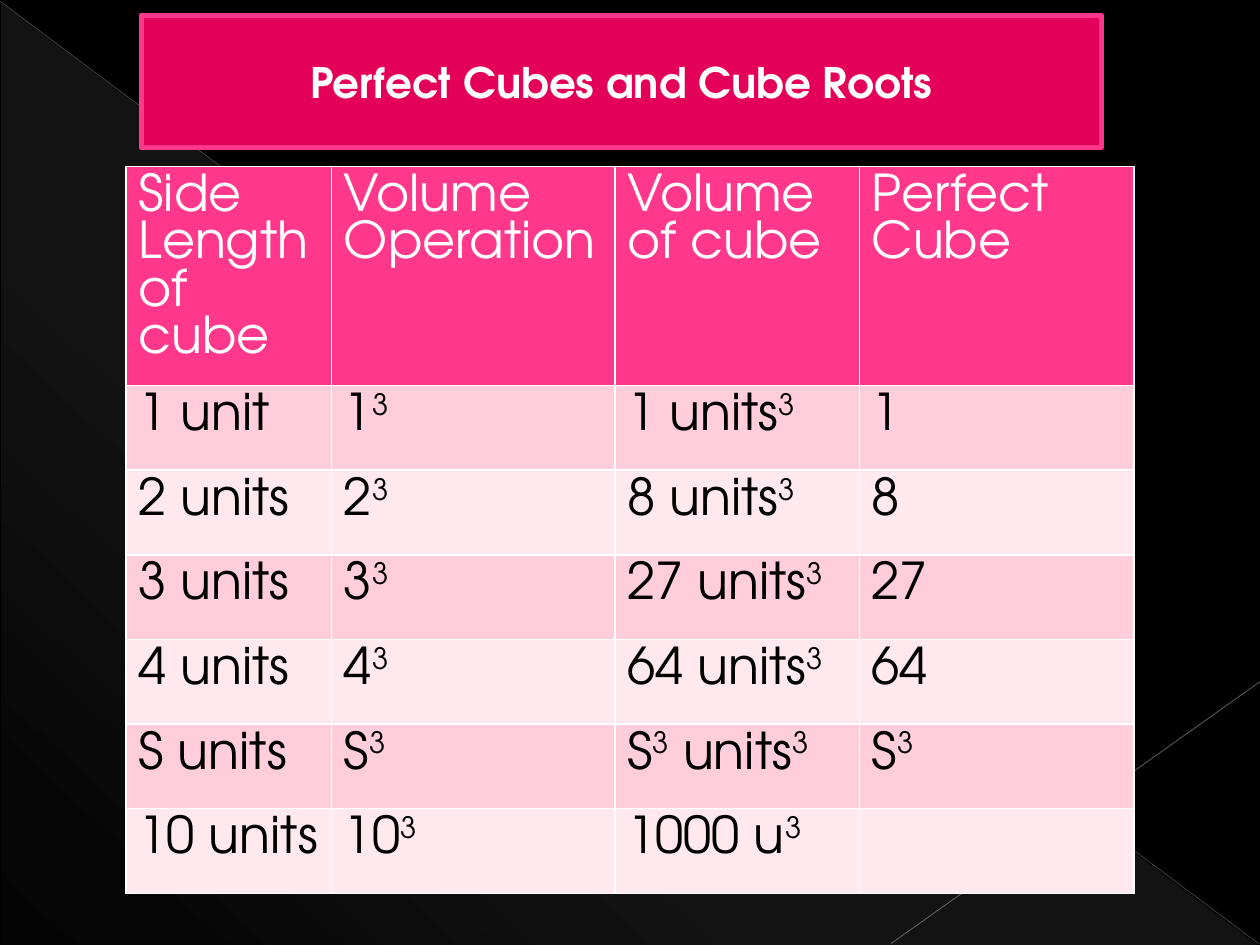
from itertools import groupby

from lxml import etree
from pptx import Presentation
from pptx.dml.color import RGBColor
from pptx.enum.shapes import MSO_CONNECTOR as CONN, MSO_SHAPE as SHAPE
from pptx.enum.text import MSO_ANCHOR as ANCHOR, PP_ALIGN as ALIGN
from pptx.oxml import parse_xml
from pptx.oxml.ns import nsdecls, qn
from pptx.util import Inches, Pt

FONT = "TeX Gyre Adventor"
COLUMNS = [1.63, 2.25, 1.94, 2.18]
ROWS = [
    ["Side Length of cube", "Volume Operation", "Volume of cube", "Perfect Cube"],
    ["1 unit", "1³", "1 units³", "1"],
    ["2 units", "2³", "8 units³", "8"],
    ["3 units", "3³", "27 units³", "27"],
    ["4 units", "4³", "64 units³", "64"],
    ["S units", "S³", "S³ units³", "S³"],
    ["10 units", "10³", "1000 u³", ""],
]


def rgb(value):
    """Turn a hex string into a colour."""
    return RGBColor.from_string(value)


def set_font(p, size, color, bold=False):
    """Set the font of a whole paragraph."""
    p.font.name, p.font.size, p.font.bold = FONT, Pt(size), bold
    p.font.color.rgb = rgb(color)


def add_ray(s, start, end, color, width, opacity):
    """Draw a thin translucent line."""
    ray = s.shapes.add_connector(CONN.STRAIGHT, *map(Inches, start + end))
    ray.line.color.rgb = rgb(color)
    ray.line.width = Pt(width)
    clr = ray.line._ln.find(".//" + qn("a:srgbClr"))
    etree.SubElement(clr, qn("a:alpha")).set("val", str(opacity * 1000))
    etree.SubElement(ray._element.spPr, qn("a:effectLst"))


def add_backdrop(s, left, top, width, height):
    """Draw the faint triangle and the crossing lines behind the content."""
    box = (left + 0.01, top + 0.02, width - 0.02, height - 0.02)
    sp = s.shapes.add_shape(SHAPE.RIGHT_TRIANGLE, *map(Inches, box))
    sp.shadow.inherit = False
    sp.line.fill.background()
    stops = "".join(
        f'<a:gs pos="{pos}000"><a:srgbClr val="D2D2D2"><a:alpha val="{alpha}000"/></a:srgbClr></a:gs>'
        for pos, alpha in [(0, 10), (70, 8), (100, 1)]
    )
    grad = parse_xml(
        f'<a:gradFill {nsdecls("a")} rotWithShape="1"><a:gsLst>{stops}</a:gsLst>'
        f'<a:lin ang="{133 * 60000}" scaled="0"/></a:gradFill>'
    )
    sp._element.spPr.find(qn("a:prstGeom")).addnext(grad)
    right, bottom = left + width, top + height - 0.01
    add_ray(s, (left, top + 0.01), (right - 0.01, bottom), "BFBFBF", 0.39, 35)
    add_ray(s, (right, top + 5.41), (left + 7.07, bottom), "C6C6C6", 0.47, 45)


def add_title(s, left, top, width, height):
    """Draw the framed title."""
    sp = s.shapes.add_shape(SHAPE.RECTANGLE, *map(Inches, (left, top, width, height)))
    sp.shadow.inherit = False
    sp.fill.solid()
    sp.fill.fore_color.rgb = rgb("E40059")
    sp.line.color.rgb = rgb("FF388C")
    sp.line.width = Pt(3)
    tf = sp.text_frame
    tf.word_wrap = True
    tf.vertical_anchor = ANCHOR.MIDDLE
    p = tf.paragraphs[0]
    p.text = "Perfect Cubes and Cube Roots"
    p.alignment = ALIGN.CENTER
    set_font(p, 24, "FFFFFF", bold=True)


def set_borders(cell):
    """Give a cell white borders, placed before its fill."""
    tc_pr = cell._tc.get_or_add_tcPr()
    for i, side in enumerate(["lnL", "lnR", "lnT", "lnB"]):
        tc_pr.insert(i, parse_xml(
            f'<a:{side} {nsdecls("a")} w="{Pt(1)}"><a:solidFill>'
            f'<a:srgbClr val="FFFFFF"/></a:solidFill></a:{side}>'
        ))


def fill_cell(cell, text, fill, color):
    """Write a cell, raising each ³ as a superscript 3."""
    cell.fill.solid()
    cell.fill.fore_color.rgb = rgb(fill)
    cell.margin_left = cell.margin_right = Inches(0.1)
    cell.margin_top = cell.margin_bottom = Inches(0.06)
    set_borders(cell)
    p = cell.text_frame.paragraphs[0]
    set_font(p, 29, color)
    for raised, chars in groupby(text, lambda c: c == "³"):
        r = p.add_run()
        r.text = "3" if raised else "".join(chars)
        if raised:
            r.font._element.set("baseline", "30000")


def add_cube_table(s, left, top, width, height):
    """Draw the table of side lengths and volumes."""
    box = map(Inches, (left, top, width, height))
    table = s.shapes.add_table(len(ROWS), len(COLUMNS), *box).table
    for column, share in zip(table.columns, COLUMNS):
        column.width = Inches(width * share / sum(COLUMNS))
    header = 1.74
    for i, texts in enumerate(ROWS):
        table.rows[i].height = Inches((height - header) / (len(ROWS) - 1) if i else header)
        fill = ("FFCEDA" if i % 2 else "FFE8EE") if i else "FF388C"
        color = "000000" if i else "FFFFFF"
        for j, text in enumerate(texts):
            fill_cell(table.cell(i, j), text, fill, color)


def main():
    """Build the slide."""
    prs = Presentation()
    prs.slide_width, prs.slide_height = Inches(10), Inches(7.5)
    s = prs.slides.add_slide(prs.slide_layouts[6])
    s.background.fill.solid()
    s.background.fill.fore_color.rgb = rgb("000000")
    add_backdrop(s, 0, 0, 10, 7.5)
    add_title(s, 1.12, 0.12, 7.62, 1.05)
    add_cube_table(s, 1, 1.32, 8, 5.77)
    prs.save("out.pptx")


if __name__ == "__main__":
    main()
